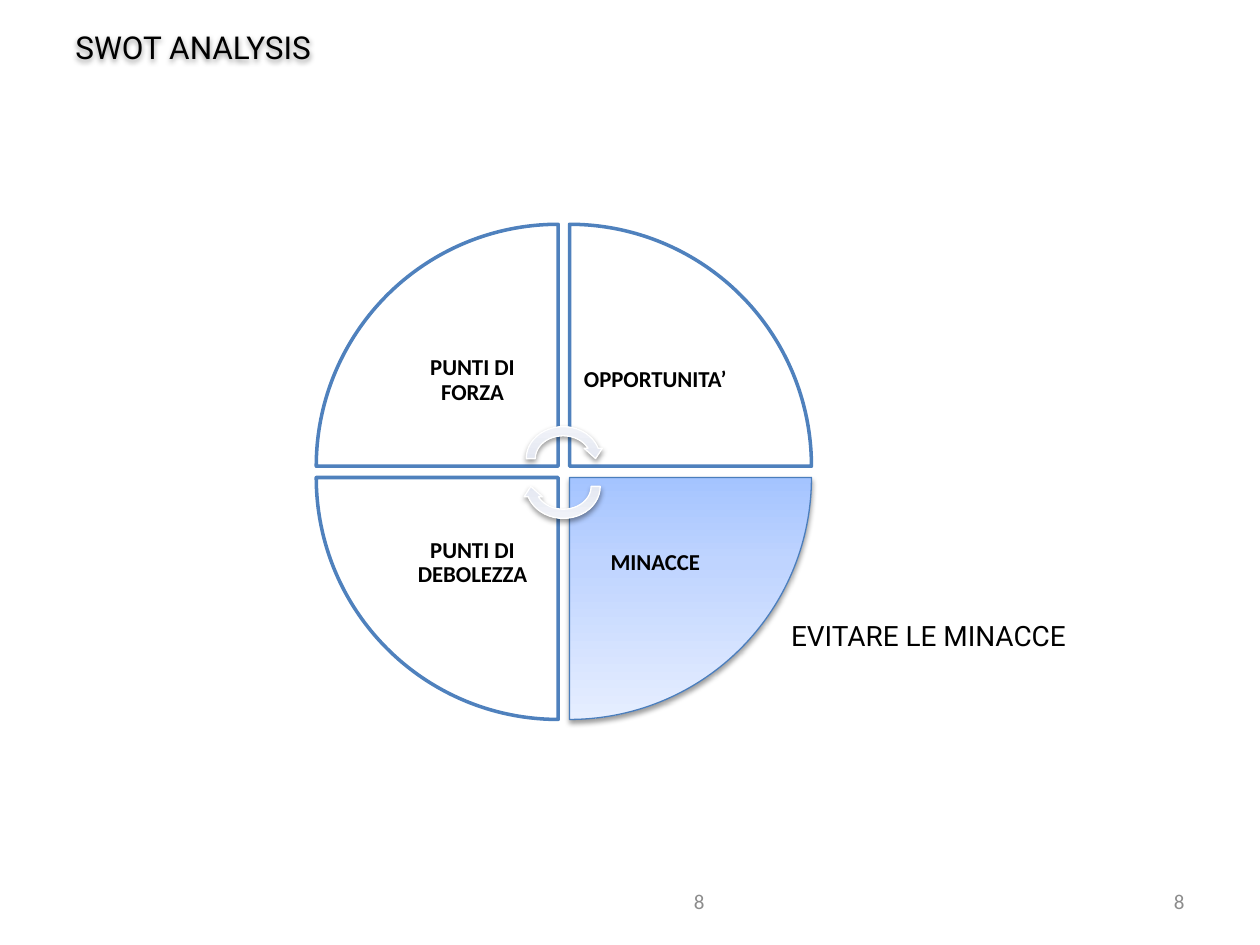
from dataclasses import dataclass

from lxml import etree
from pptx import Presentation, util as u
from pptx.dml.color import RGBColor
from pptx.enum import shapes, text
from pptx.oxml import ns


@dataclass(frozen=True)
class Theme:
    body_font: str = "Calibri"
    title_font: str = "Roboto"
    ink: str = "000000"
    paper: str = "FFFFFF"
    muted: str = "8C8C8C"
    outline: str = "4F81BD"
    active_outline: str = "4B7EBC"
    active_stops: tuple = ((0, "A4C4FF"), (35, "BFD4FF"), (100, "E6EEFF"))
    arrow_stops: tuple = ((0, "D3D9E9"), (35, "E0E4EF"), (100, "F2F4F9"))
    title_size: int = 18
    caption_size: int = 16
    label_size: int = 13
    number_size: int = 12


THEME = Theme()
LEFT, TOP = 2.51, 1.78
WEDGE, STEP = 1.92, 2.01
LABEL = 1.36


def add_child(parent, tag, **attributes):
    return etree.SubElement(parent, ns.qn(tag), attributes)


def apply_gradient(shape, stops):
    """Fill with several stops running from bottom to top, turning with the shape."""
    shape.fill.background()
    properties = shape.element.spPr
    gradient = etree.Element(ns.qn("a:gradFill"), rotWithShape="1")
    stop_list = add_child(gradient, "a:gsLst")
    for position, color in stops:
        stop = add_child(stop_list, "a:gs", pos=str(position * 1000))
        add_child(stop, "a:srgbClr", val=color)
    add_child(gradient, "a:lin", ang=str(270 * 60000), scaled="0")
    properties.replace(properties.find(ns.qn("a:noFill")), gradient)


def apply_shadow(shape):
    shape.shadow.inherit = False
    effects = shape.element.spPr.find(ns.qn("a:effectLst"))
    shadow = add_child(effects, "a:outerShdw", blurRad=str(u.Pt(3.1)),
                       dist=str(u.Pt(1.6)), dir=str(90 * 60000), rotWithShape="0")
    color = add_child(shadow, "a:srgbClr", val="000000")
    add_child(color, "a:alpha", val="38000")


def add_figure(page, kind, left, top, width, height, rotation, line, weight, stops=None):
    """Add a plain white shape, or a shaded one with a shadow when stops are given."""
    shape = page.shapes.add_shape(kind, u.Inches(left), u.Inches(top),
                                  u.Inches(width), u.Inches(height))
    shape.rotation = rotation
    shape.line.color.rgb = RGBColor.from_string(line)
    shape.line.width = u.Pt(weight)
    if stops:
        apply_gradient(shape, stops)
        apply_shadow(shape)
    else:
        shape.fill.solid()
        shape.fill.fore_color.rgb = RGBColor.from_string(THEME.paper)
        shape.shadow.inherit = False


def add_text(page, words, left, top, width, height, size, font, color=THEME.ink,
             align=text.PP_ALIGN.LEFT, anchor=text.MSO_ANCHOR.MIDDLE, bold=False):
    box = page.shapes.add_textbox(u.Inches(left), u.Inches(top),
                                  u.Inches(width), u.Inches(height))
    frame = box.text_frame
    frame.word_wrap = True
    frame.vertical_anchor = anchor
    para = frame.paragraphs[0]
    para.alignment = align
    span = para.add_run()
    span.text = words
    span.font.name = font
    span.font.size = u.Pt(size)
    span.font.bold = bold
    span.font.color.rgb = RGBColor.from_string(color)
    return box


def add_quadrant(page, words, column, row, rotation, active=False):
    left, top = LEFT + column * STEP, TOP + row * STEP
    add_figure(page, shapes.MSO_SHAPE.PIE_WEDGE, left, top, WEDGE, WEDGE, rotation,
               THEME.active_outline if active else THEME.outline,
               0.75 if active else 2, THEME.active_stops if active else None)
    inset = WEDGE - LABEL
    box = add_text(page, words, left + inset * (1 - column), top + inset * (1 - row),
                   LABEL, LABEL, THEME.label_size, THEME.body_font,
                   align=text.PP_ALIGN.CENTER, bold=True)
    frame = box.text_frame
    frame.margin_top = frame.margin_bottom = u.Inches(0.1)
    frame.paragraphs[0].line_spacing = 0.9


def main():
    deck = Presentation()
    deck.slide_width, deck.slide_height = u.Inches(10), u.Inches(7.5)
    page = deck.slides.add_slide(deck.slide_layouts[6])

    for left in (7.17, 3.36):
        add_text(page, "8", left, 6.95, 2.33, 0.4, THEME.number_size,
                 THEME.body_font, THEME.muted, text.PP_ALIGN.RIGHT)

    add_quadrant(page, "PUNTI DI FORZA", 0, 0, 0)
    add_quadrant(page, "OPPORTUNITA’", 1, 0, 90)
    add_quadrant(page, "MINACCE", 1, 1, 180, active=True)
    add_quadrant(page, "PUNTI DI DEBOLEZZA", 0, 1, 270)

    for top, rotation in ((3.35, 0), (3.57, 180)):
        add_figure(page, shapes.MSO_SHAPE.CIRCULAR_ARROW, 4.14, top, 0.66, 0.58,
                   rotation, THEME.paper, 0.75, THEME.arrow_stops)

    caption = add_text(page, "EVITARE LE MINACCE", 6.18, 4.86, 3.31, 0.37,
                       THEME.caption_size, THEME.title_font,
                       anchor=text.MSO_ANCHOR.TOP)
    caption.text_frame.auto_size = text.MSO_AUTO_SIZE.SHAPE_TO_FIT_TEXT
    title = add_text(page, "SWOT ANALYSIS", 0.5, 0.17, 2.23, 0.4,
                     THEME.title_size, THEME.title_font)
    apply_shadow(title)

    deck.save("out.pptx")


if __name__ == "__main__":
    main()
